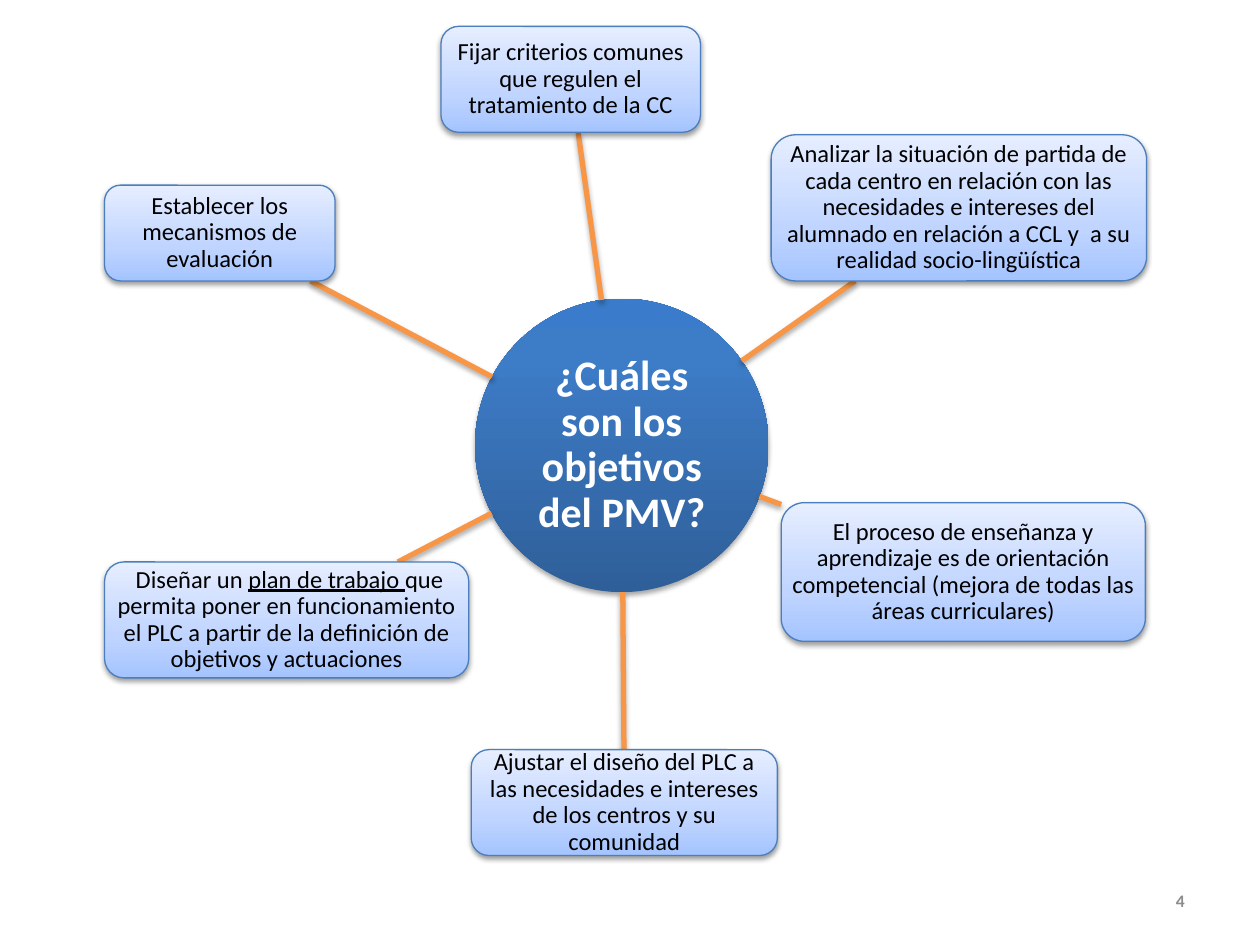
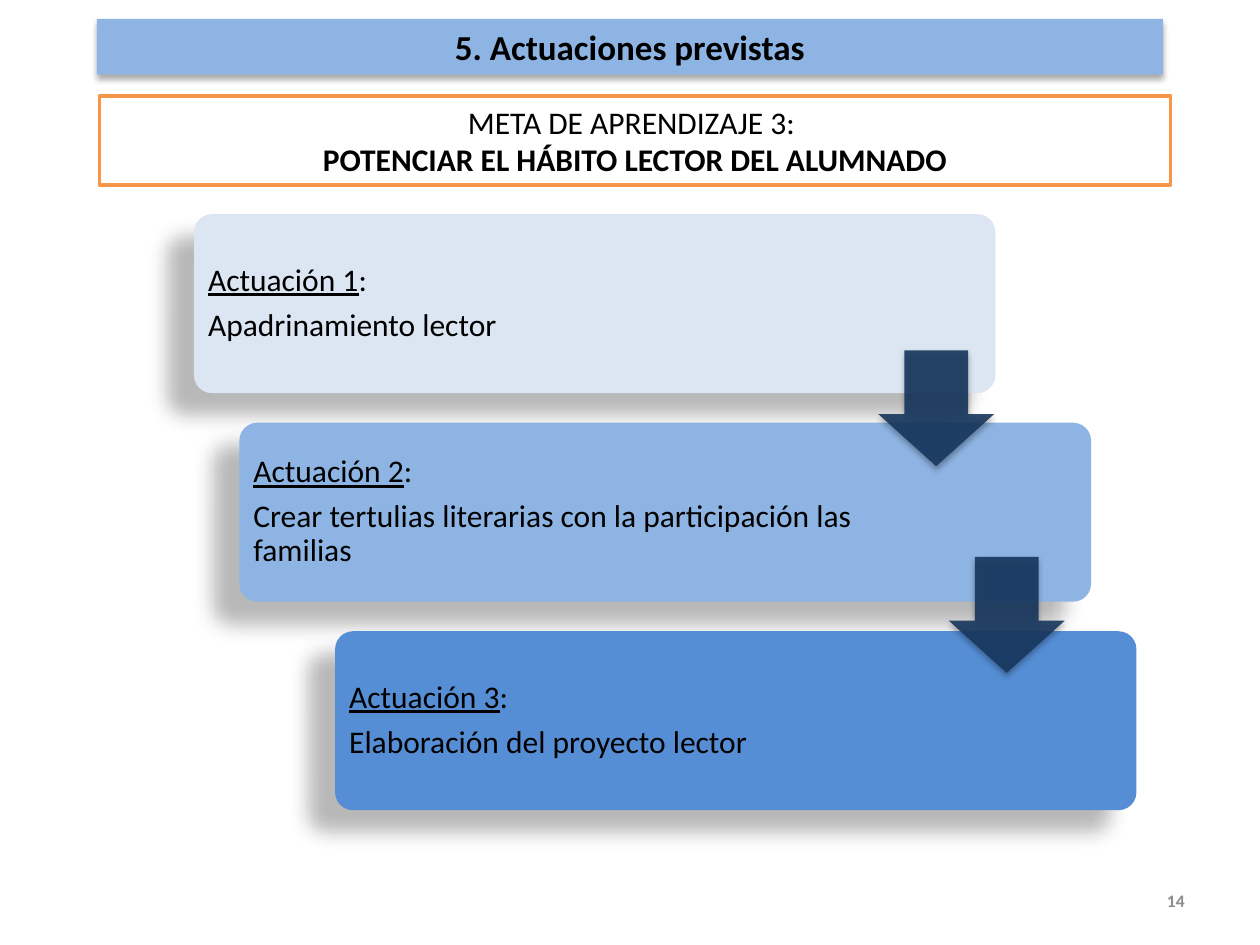
"""Build two slides: the aims of the PMV as a radial map, and the planned actions as steps."""
from math import hypot

from lxml.etree import SubElement
from pptx import Presentation
from pptx.dml.color import RGBColor
from pptx.enum.shapes import MSO_CONNECTOR, MSO_SHAPE as Shape
from pptx.enum.text import MSO_ANCHOR as Anchor, PP_ALIGN as Align
from pptx.oxml import parse_xml
from pptx.oxml.ns import nsdecls, qn
from pptx.util import Inches, Pt

FONT = "Calibri"
BLACK = RGBColor(0x00, 0x00, 0x00)
WHITE = RGBColor(0xFF, 0xFF, 0xFF)
GREY = RGBColor(0x8C, 0x8C, 0x8C)
ORANGE = RGBColor(0xF7, 0x96, 0x46)
OUTLINE_BLUE = RGBColor(0x4B, 0x7E, 0xBC)
PALE_BLUE = RGBColor(0xDC, 0xE6, 0xF2)
SKY_BLUE = RGBColor(0x8E, 0xB4, 0xE3)
MID_BLUE = RGBColor(0x55, 0x8E, 0xD5)
NAVY = RGBColor(0x17, 0x37, 0x5E)

HUB_GRADIENT = [
    (0, RGBColor(0x2F, 0x5F, 0x99)),
    (80, RGBColor(0x3D, 0x7C, 0xC7)),
    (100, RGBColor(0x3A, 0x7C, 0xCB)),
]
AIM_GRADIENT = [
    (0, RGBColor(0xA4, 0xC4, 0xFF)),
    (35, RGBColor(0xBF, 0xD4, 0xFF)),
    (100, RGBColor(0xE6, 0xEE, 0xFF)),
]

# Opacity in percent, blur and distance in points, direction in degrees.
HUB_SHADOW = (35, 3.1, 1.8, 90)
AIM_SHADOW = (38, 3.1, 1.6, 90)
BAND_SHADOW = (32, 3.5, 2.2, 90)
CARD_SHADOW = (28, 11.8, 19.7, 141)

HUB_TEXT = "¿Cuáles son los objetivos del PMV?"
HUB_BOX = (3.77, 2.37, 2.33, 2.33)
AIMS = [
    ((3.5, 0.21, 2.06, 0.84),
     [("Fijar criterios comunes que regulen el tratamiento de la CC", "")]),
    ((6.12, 1.07, 2.98, 1.16),
     [("Analizar la situación de partida de cada centro en relación con las necesidades "
       "e intereses del alumnado en relación a CCL y  a su realidad socio-lingüística", "")]),
    ((6.2, 3.99, 2.89, 1.1),
     [("El proceso de enseñanza y aprendizaje es de orientación competencial "
       "(mejora de todas las áreas curriculares)", "")]),
    ((3.74, 5.95, 2.43, 0.84),
     [("Ajustar el diseño del PLC a las necesidades e intereses de los centros "
       "y su comunidad", "")]),
    ((0.83, 4.46, 2.89, 0.92),
     [(" Diseñar un ", ""), ("plan de trabajo ", "u"),
      ("que permita poner en funcionamiento el PLC a partir de la definición "
       "de objetivos y actuaciones", "")]),
    ((0.83, 1.47, 1.83, 0.76),
     [("Establecer los mecanismos de evaluación", "")]),
]

BAND_TEXT = "5. Actuaciones previstas"
GOAL_LINES = [
    [("META DE APRENDIZAJE 3: ", "")],
    [("POTENCIAR EL HÁBITO LECTOR DEL ALUMNADO", "b")],
]
ACTIONS = [
    ("Actuación 1", "Apadrinamiento lector", 1.54, 6.36, PALE_BLUE),
    ("Actuación 2", "Crear tertulias literarias con la participación las familias",
     1.9, 6.76, SKY_BLUE),
    ("Actuación 3", "Elaboración del proyecto lector", 2.66, 6.36, MID_BLUE),
]
CARD_TOP, CARD_HEIGHT, CARD_GAP = 1.7, 1.42, 0.235
ARROWS = [(6.97, 2.78), (7.53, 4.42)]
ARROW_SIZE = 0.92


def write_text(shape, paragraphs, size, color=BLACK, align=Align.CENTER,
               insets=(0.1, 0.05, 0.1, 0.05), line_spacing=None, gap=0):
    frame = shape.text_frame
    frame.word_wrap = True
    frame.vertical_anchor = Anchor.MIDDLE
    (frame.margin_left, frame.margin_top,
     frame.margin_right, frame.margin_bottom) = map(Inches, insets)
    for index, runs in enumerate(paragraphs):
        paragraph = frame.add_paragraph() if index else frame.paragraphs[0]
        paragraph.alignment = align
        if line_spacing:
            paragraph.line_spacing = line_spacing
        if index:
            paragraph.space_before = Pt(gap)
        for text, style in runs:
            run = paragraph.add_run()
            run.text = text
            font = run.font
            font.name, font.size = FONT, Pt(size)
            font.color.rgb = color
            font.bold = "b" in style
            font.underline = "u" in style


def add_shadow(properties, shadow):
    opacity, blur, distance, direction = shadow
    effects = properties.find(qn("a:effectLst"))
    if effects is None:
        effects = SubElement(properties, qn("a:effectLst"))
    outer = SubElement(effects, qn("a:outerShdw"), blurRad=str(Pt(blur)),
                       dist=str(Pt(distance)), dir=str(direction * 60000), rotWithShape="0")
    color = SubElement(outer, qn("a:srgbClr"), val=str(BLACK))
    SubElement(color, qn("a:alpha"), val=str(opacity * 1000))


def fill_gradient(shape, stops):
    shape.fill.background()
    properties = shape._element.spPr
    stop_xml = "".join(f'<a:gs pos="{position * 1000}"><a:srgbClr val="{color}"/></a:gs>'
                       for position, color in stops)
    gradient = parse_xml(f'<a:gradFill {nsdecls("a")} rotWithShape="1"><a:gsLst>{stop_xml}'
                         '</a:gsLst><a:lin ang="16200000" scaled="0"/></a:gradFill>')
    properties.replace(properties.find(qn("a:noFill")), gradient)


def add_box(slide, kind, box, fill, line=None, line_width=0.75, shadow=None, adjustments=()):
    shape = slide.shapes.add_shape(kind, *map(Inches, box))
    for index, value in enumerate(adjustments):
        shape.adjustments[index] = value
    if isinstance(fill, list):
        fill_gradient(shape, fill)
    else:
        shape.fill.solid()
        shape.fill.fore_color.rgb = fill
    if line is None:
        shape.line.fill.background()
    else:
        shape.line.color.rgb = line
        shape.line.width = Pt(line_width)
    shape.shadow.inherit = False
    if shadow:
        add_shadow(shape._element.spPr, shadow)
    return shape


def add_spoke(slide, aim_box):
    hub_x, hub_y = center(HUB_BOX)
    aim_x, aim_y = center(aim_box)
    across, down = aim_x - hub_x, aim_y - hub_y
    start = HUB_BOX[2] / 2 / hypot(across, down)
    end = 1 - min(aim_box[2] / 2 / max(abs(across), 0.01),
                  aim_box[3] / 2 / max(abs(down), 0.01))
    points = [Inches(value) for part in (start, end)
              for value in (hub_x + part * across, hub_y + part * down)]
    spoke = slide.shapes.add_connector(MSO_CONNECTOR.STRAIGHT, *points)
    spoke.line.color.rgb = ORANGE
    spoke.line.width = Pt(3)
    add_shadow(spoke._element.spPr, HUB_SHADOW)


def center(box):
    left, top, width, height = box
    return left + width / 2, top + height / 2


def add_numbered_slide(presentation, number):
    slide = presentation.slides.add_slide(presentation.slide_layouts[6])
    number_box = slide.shapes.add_textbox(*map(Inches, (9.02, 6.95, 0.48, 0.4)))
    write_text(number_box, [[(number, "b")]], size=10, color=GREY, align=Align.RIGHT)
    return slide


def build_aims(presentation):
    slide = add_numbered_slide(presentation, "4")
    hub = add_box(slide, Shape.OVAL, HUB_BOX, HUB_GRADIENT, shadow=HUB_SHADOW)
    write_text(hub, [[(HUB_TEXT, "b")]], size=24, color=WHITE,
               insets=(0.02,) * 4, line_spacing=0.9)
    for box, runs in AIMS:
        add_spoke(slide, box)
        aim = add_box(slide, Shape.ROUNDED_RECTANGLE, box, AIM_GRADIENT,
                      line=OUTLINE_BLUE, shadow=AIM_SHADOW)
        write_text(aim, [runs], size=14, insets=(0.01,) * 4, line_spacing=0.9)


def build_actions(presentation):
    slide = add_numbered_slide(presentation, "14")
    band = add_box(slide, Shape.RECTANGLE, (0.77, 0.15, 8.46, 0.44), SKY_BLUE,
                   shadow=BAND_SHADOW)
    write_text(band, [[(BAND_TEXT, "b")]], size=20)
    goal = add_box(slide, Shape.RECTANGLE, (0.79, 0.76, 8.5, 0.71), WHITE,
                   line=ORANGE, line_width=2)
    write_text(goal, GOAL_LINES, size=18)
    for index, (name, action, left, width, color) in enumerate(ACTIONS):
        top = CARD_TOP + index * (CARD_HEIGHT + CARD_GAP)
        card = add_box(slide, Shape.ROUNDED_RECTANGLE, (left, top, width, CARD_HEIGHT), color,
                       shadow=CARD_SHADOW, adjustments=(0.1,))
        write_text(card, [[(name, "u"), (":", "")], [(action, "")]], size=18,
                   align=Align.LEFT, insets=(0.07, 0.07, 1.55, 0.07),
                   line_spacing=0.9, gap=6.3)
    for left, top in ARROWS:
        arrow = add_box(slide, Shape.DOWN_ARROW, (left, top, ARROW_SIZE, ARROW_SIZE), NAVY,
                        shadow=BAND_SHADOW, adjustments=(0.55, 0.45))
        color = arrow._element.spPr.find(qn("a:solidFill")).find(qn("a:srgbClr"))
        SubElement(color, qn("a:alpha"), val="90000")


def main():
    presentation = Presentation()
    presentation.slide_width, presentation.slide_height = Inches(10), Inches(7.5)
    build_aims(presentation)
    build_actions(presentation)
    presentation.save("out.pptx")


if __name__ == "__main__":
    main()
